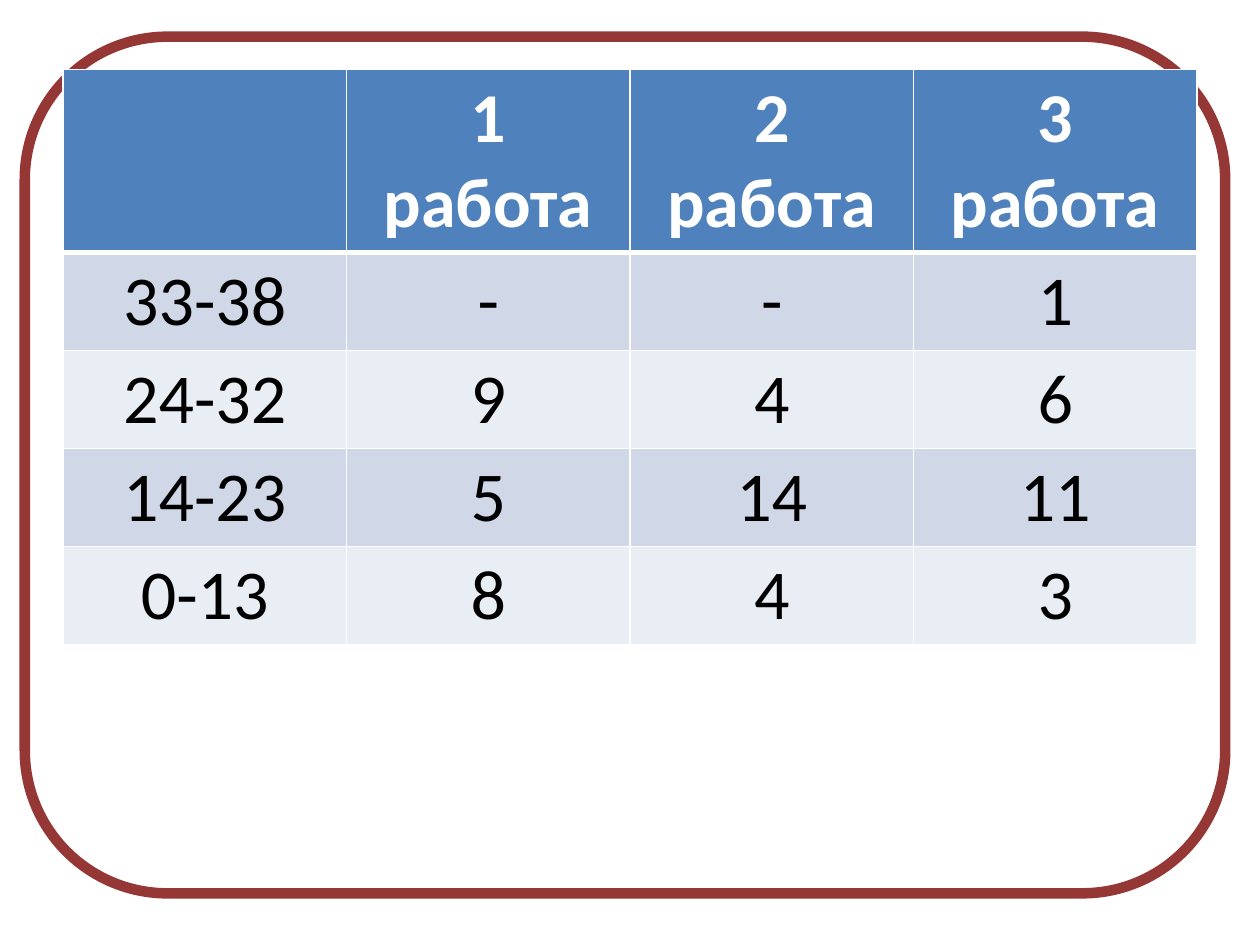
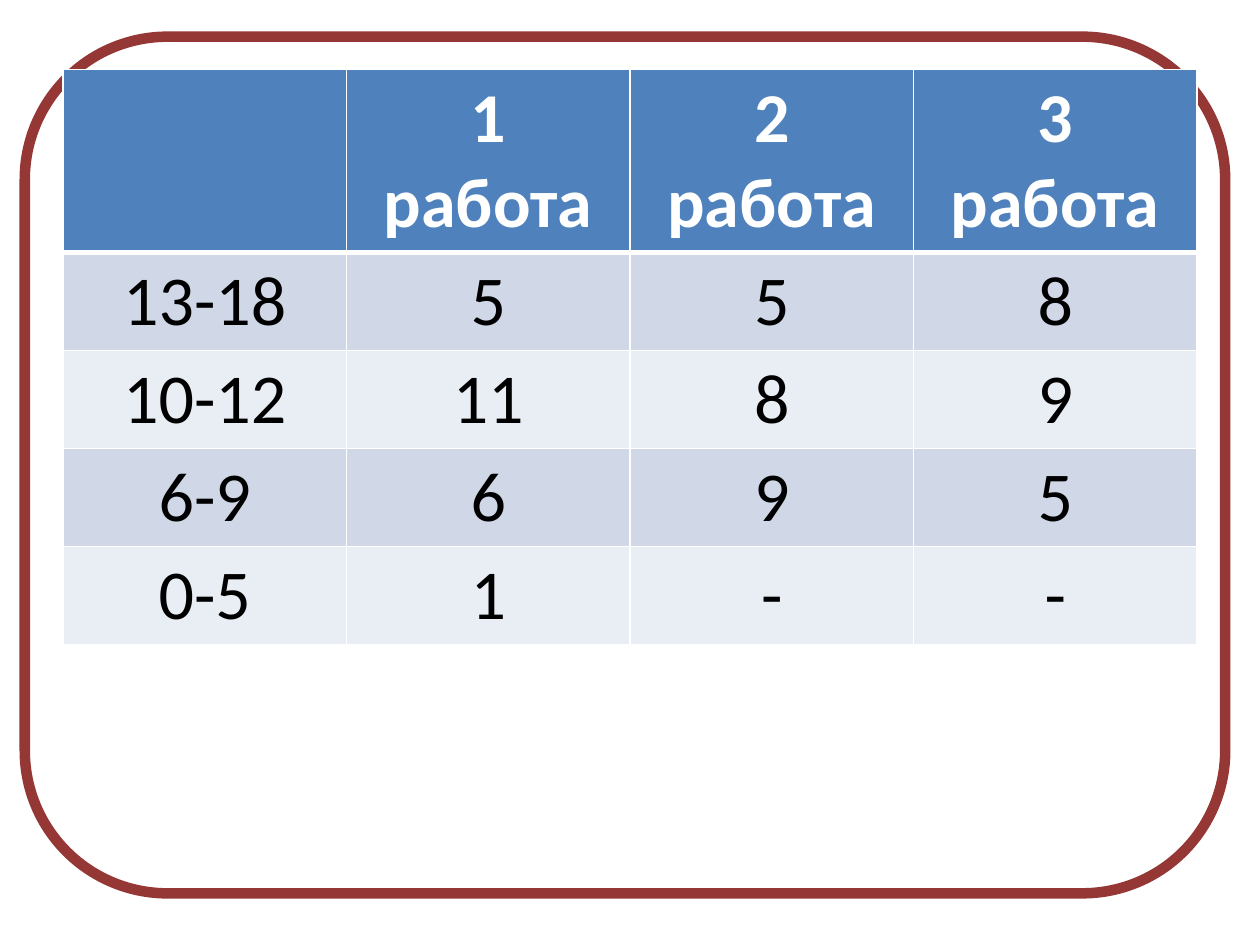
import dataclasses

import pptx
import pptx.dml.color
import pptx.enum.shapes
import pptx.enum.text
import pptx.oxml
import pptx.oxml.ns
import pptx.util

Cm = pptx.util.Cm
Pt = pptx.util.Pt


@dataclasses.dataclass(frozen=True)
class Theme:
    font: str = "Calibri"
    score_size: float = 40
    paper: str = "FFFFFF"
    ink: str = "000000"
    frame: str = "953735"
    header: str = "4F81BD"
    bands: tuple = ("D0D8E8", "E9EDF4")
    frame_width: float = 6
    grid_width: float = 1
    header_rule_width: float = 3


@dataclasses.dataclass(frozen=True)
class Box:
    left: float
    top: float
    width: float
    height: float

    def lengths(self):
        return [Cm(length) for length in dataclasses.astuple(self)]


THEME = Theme()
PAGE = Box(0, 0, 25.4, 19.05)
FRAME_BOX = Box(0.5, 0.74, 24.2, 17.27)
TABLE_BOX = Box(1.27, 1.4, 22.86, 11.55)
HEADER_HEIGHT = 3.67

WORKS = ("", "1 работа", "2 работа", "3 работа")
SCORE_TABLES = (
    (
        ("33-38", "-", "-", "1"),
        ("24-32", "9", "4", "6"),
        ("14-23", "5", "14", "11"),
        ("0-13", "8", "4", "3"),
    ),
    (
        ("13-18", "5", "5", "8"),
        ("10-12", "11", "8", "9"),
        ("6-9", "6", "9", "5"),
        ("0-5", "1", "-", "-"),
    ),
)


def rgb(value):
    return pptx.dml.color.RGBColor.from_string(value)


def apply_format(target, values):
    for attribute, value in values.items():
        setattr(target, attribute, value)


def add_frame(slide, box):
    frame = slide.shapes.add_shape(
        pptx.enum.shapes.MSO_SHAPE.ROUNDED_RECTANGLE, *box.lengths()
    )
    frame.shadow.inherit = False
    frame.fill.solid()
    frame.fill.fore_color.rgb = rgb(THEME.paper)
    frame.line.color.rgb = rgb(THEME.frame)
    frame.line.width = Pt(THEME.frame_width)


def add_borders(cell, widths):
    properties = cell._tc.get_or_add_tcPr()
    for side in ("L", "R", "T", "B"):
        width = Pt(widths.get(side, THEME.grid_width))
        properties.append(
            pptx.oxml.parse_xml(
                f'<a:ln{side} {pptx.oxml.ns.nsdecls("a")} w="{width}">'
                f'<a:solidFill><a:srgbClr val="{THEME.paper}"/></a:solidFill>'
                f"</a:ln{side}>"
            )
        )


def fill_cell(cell, score, row_index):
    is_header = row_index == 0
    rule_side = {0: "B", 1: "T"}.get(row_index)
    add_borders(cell, {rule_side: THEME.header_rule_width})
    band = THEME.bands[(row_index - 1) % len(THEME.bands)]
    cell.fill.solid()
    cell.fill.fore_color.rgb = rgb(THEME.header if is_header else band)
    cell.text = score
    paragraph = cell.text_frame.paragraphs[0]
    paragraph.alignment = pptx.enum.text.PP_ALIGN.CENTER
    for run in paragraph.runs:
        apply_format(
            run.font,
            {"name": THEME.font, "size": Pt(THEME.score_size), "bold": is_header},
        )
        run.font.color.rgb = rgb(THEME.paper if is_header else THEME.ink)


def add_score_table(slide, box, scores):
    rows = (WORKS, *scores)
    table = slide.shapes.add_table(len(rows), len(WORKS), *box.lengths()).table
    for column in table.columns:
        column.width = Cm(box.width / len(WORKS))
    score_height = (box.height - HEADER_HEIGHT) / len(scores)
    for row_index, row in enumerate(rows):
        table.rows[row_index].height = Cm(score_height if row_index else HEADER_HEIGHT)
        for column_index, score in enumerate(row):
            fill_cell(table.cell(row_index, column_index), score, row_index)


def add_score_slide(deck, scores):
    slide = deck.slides.add_slide(deck.slide_layouts.get_by_name("Blank"))
    add_frame(slide, FRAME_BOX)
    add_score_table(slide, TABLE_BOX, scores)


def main():
    deck = pptx.Presentation()
    apply_format(
        deck, {"slide_width": Cm(PAGE.width), "slide_height": Cm(PAGE.height)}
    )
    for scores in SCORE_TABLES:
        add_score_slide(deck, scores)
    deck.save("out.pptx")


if __name__ == "__main__":
    main()
